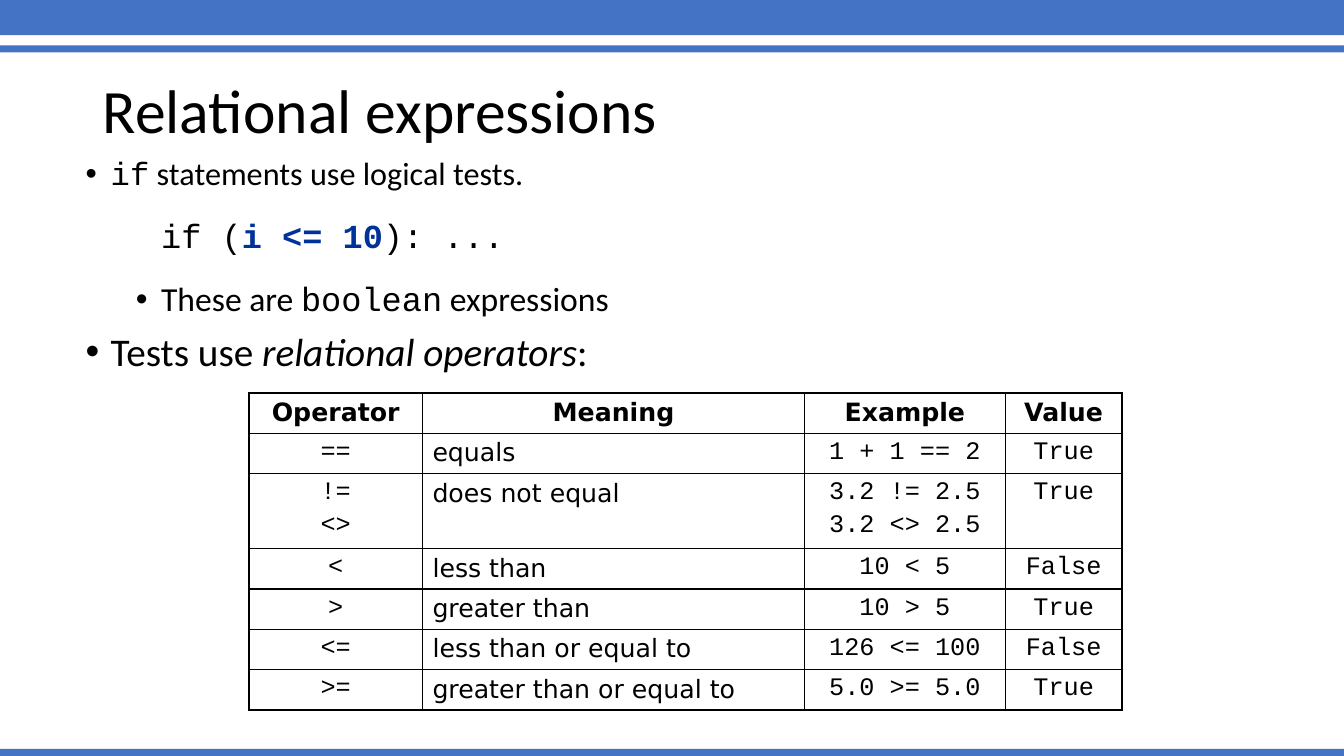
from dataclasses import dataclass

from lxml import etree
from pptx import Presentation
from pptx.dml.color import RGBColor
from pptx.enum import shapes, text
from pptx.oxml import ns
from pptx.util import Inches, Pt

BLUE = RGBColor(0x44, 0x72, 0xC4)
NAVY = RGBColor(0x00, 0x33, 0x99)
BLACK = RGBColor(0x00, 0x00, 0x00)
BODY_FONT, CODE_FONT, TABLE_FONT = "Calibri", "Courier New", "DejaVu Sans"
THIN, THICK = 1, 2.25


@dataclass(frozen=True)
class Bar:
    top: float
    height: float


@dataclass(frozen=True)
class Run:
    content: str
    size: float
    font: str = BODY_FONT
    color: RGBColor = BLACK
    bold: bool = False
    italic: bool = False


@dataclass(frozen=True)
class Item:
    runs: tuple[Run, ...]
    left: float
    before: float
    bullet: bool = True


@dataclass(frozen=True)
class Operator:
    symbols: str
    meaning: str
    examples: str
    value: str


BARS = (Bar(0, 0.35), Bar(0.45, 0.07), Bar(7.43, 0.07))
ITEMS = (
    Item((Run("if", 23, CODE_FONT), Run(" statements use logical tests.", 23)), 0.25, 10),
    Item((Run("if (", 24, CODE_FONT),
          Run("i <= 10", 24, CODE_FONT, NAVY, bold=True),
          Run("): ...", 24, CODE_FONT)), 0.75, 19, bullet=False),
    Item((Run("These are ", 24), Run("boolean", 24, CODE_FONT),
          Run(" expressions", 24)), 0.75, 19),
    Item((Run("Tests use ", 28), Run("relational operators", 28, italic=True),
          Run(":", 28)), 0.25, 10),
)
HEADINGS = ("Operator", "Meaning", "Example", "Value")
OPERATORS = (
    Operator("==", "equals", "1 + 1 == 2", "True"),
    Operator("!=\n<>", "does not equal", "3.2 != 2.5\n3.2 <> 2.5", "True"),
    Operator("<", "less than", "10 < 5", "False"),
    Operator(">", "greater than", "10 > 5", "True"),
    Operator("<=", "less than or equal to", "126 <= 100", "False"),
    Operator(">=", "greater than or equal to", "5.0 >= 5.0", "True"),
)
COLUMN_WIDTHS = (1.72, 3.79, 1.99, 1.16)
ROW_HEIGHT, LINE_HEIGHT = 0.4, 0.32


def add_text(paragraph, content: str, *, size: float, font: str = BODY_FONT,
             color: RGBColor = BLACK, bold: bool = False, italic: bool = False) -> None:
    run = paragraph.add_run()
    run.text = content
    run.font.size = Pt(size)
    run.font.name = font
    run.font.color.rgb = color
    run.font.bold = bold
    run.font.italic = italic


def add_bar(slide, bar: Bar, width: int) -> None:
    shape = slide.shapes.add_shape(shapes.MSO_SHAPE.RECTANGLE, 0, Inches(bar.top),
                                   width, Inches(bar.height))
    shape.shadow.inherit = False
    shape.fill.solid()
    shape.fill.fore_color.rgb = BLUE
    shape.line.fill.background()


def add_title(slide, content: str) -> None:
    title = slide.shapes.title
    title.left, title.top = Inches(0.92), Inches(0.4)
    title.width, title.height = Inches(11.5), Inches(1.45)
    title.text_frame.vertical_anchor = text.MSO_ANCHOR.MIDDLE
    paragraph = title.text_frame.paragraphs[0]
    paragraph.alignment = text.PP_ALIGN.LEFT
    paragraph.line_spacing = 0.9
    add_text(paragraph, content, size=44)


def add_item(paragraph, item: Item) -> None:
    paragraph.line_spacing = 0.9
    paragraph.space_before = Pt(item.before)
    properties = paragraph._p.get_or_add_pPr()
    properties.set("marL", str(Inches(item.left)))
    properties.set("indent", str(Inches(-0.25 if item.bullet else 0)))
    if item.bullet:
        etree.SubElement(properties, ns.qn("a:buFont"), typeface="Arial")
        etree.SubElement(properties, ns.qn("a:buChar"), char="•")
    else:
        etree.SubElement(properties, ns.qn("a:buNone"))
    for run in item.runs:
        add_text(paragraph, run.content, size=run.size, font=run.font,
                 color=run.color, bold=run.bold, italic=run.italic)


def add_body(slide) -> None:
    frame = slide.shapes.add_textbox(Inches(0.75), Inches(1.52),
                                     Inches(11.5), Inches(2.3)).text_frame
    frame.word_wrap = True
    for index, item in enumerate(ITEMS):
        add_item(frame.add_paragraph() if index else frame.paragraphs[0], item)


def set_borders(cell, widths: dict[str, float]) -> None:
    properties = cell._tc.get_or_add_tcPr()
    for index, (side, width) in enumerate(widths.items()):
        line = etree.Element(ns.qn(f"a:ln{side}"), w=str(Pt(width)))
        fill = etree.SubElement(line, ns.qn("a:solidFill"))
        etree.SubElement(fill, ns.qn("a:srgbClr"), val=str(BLACK))
        properties.insert(index, line)


def fill_cell(cell, content: str, *, font: str, bold: bool, centered: bool) -> None:
    cell.fill.background()
    for index, line in enumerate(content.split("\n")):
        frame = cell.text_frame
        paragraph = frame.add_paragraph() if index else frame.paragraphs[0]
        paragraph.alignment = text.PP_ALIGN.CENTER if centered else text.PP_ALIGN.LEFT
        paragraph.space_before = Pt(3 if index else 0)
        add_text(paragraph, line, size=18, font=font, bold=bold)


def add_operator_table(slide) -> None:
    rows = [HEADINGS] + [(operator.symbols, operator.meaning, operator.examples,
                          operator.value) for operator in OPERATORS]
    heights = [ROW_HEIGHT + LINE_HEIGHT * max(value.count("\n") for value in row)
               for row in rows]
    table = slide.shapes.add_table(
        len(rows), len(HEADINGS), Inches(2.47), Inches(3.9),
        Inches(sum(COLUMN_WIDTHS)), Inches(sum(heights))).table
    table.first_row = table.horz_banding = False
    for column, width in zip(table.columns, COLUMN_WIDTHS):
        column.width = Inches(width)
    last_row, last_column = len(rows) - 1, len(HEADINGS) - 1
    for row_index, row in enumerate(rows):
        table.rows[row_index].height = Inches(heights[row_index])
        heading = row_index == 0
        for column_index, content in enumerate(row):
            cell = table.cell(row_index, column_index)
            meaning = column_index == 1
            fill_cell(cell, content, font=TABLE_FONT if heading or meaning else CODE_FONT,
                      bold=heading, centered=heading or not meaning)
            set_borders(cell, {
                "L": THICK if column_index == 0 else THIN,
                "R": THICK if column_index == last_column else THIN,
                "T": THICK if heading else THIN,
                "B": THICK if row_index == last_row else THIN,
            })


def main() -> None:
    presentation = Presentation()
    presentation.slide_width, presentation.slide_height = Inches(13.33), Inches(7.5)
    slide = presentation.slides.add_slide(presentation.slide_layouts[5])
    for bar in BARS:
        add_bar(slide, bar, presentation.slide_width)
    add_title(slide, "Relational expressions")
    add_body(slide)
    add_operator_table(slide)
    presentation.save("out.pptx")


if __name__ == "__main__":
    main()
